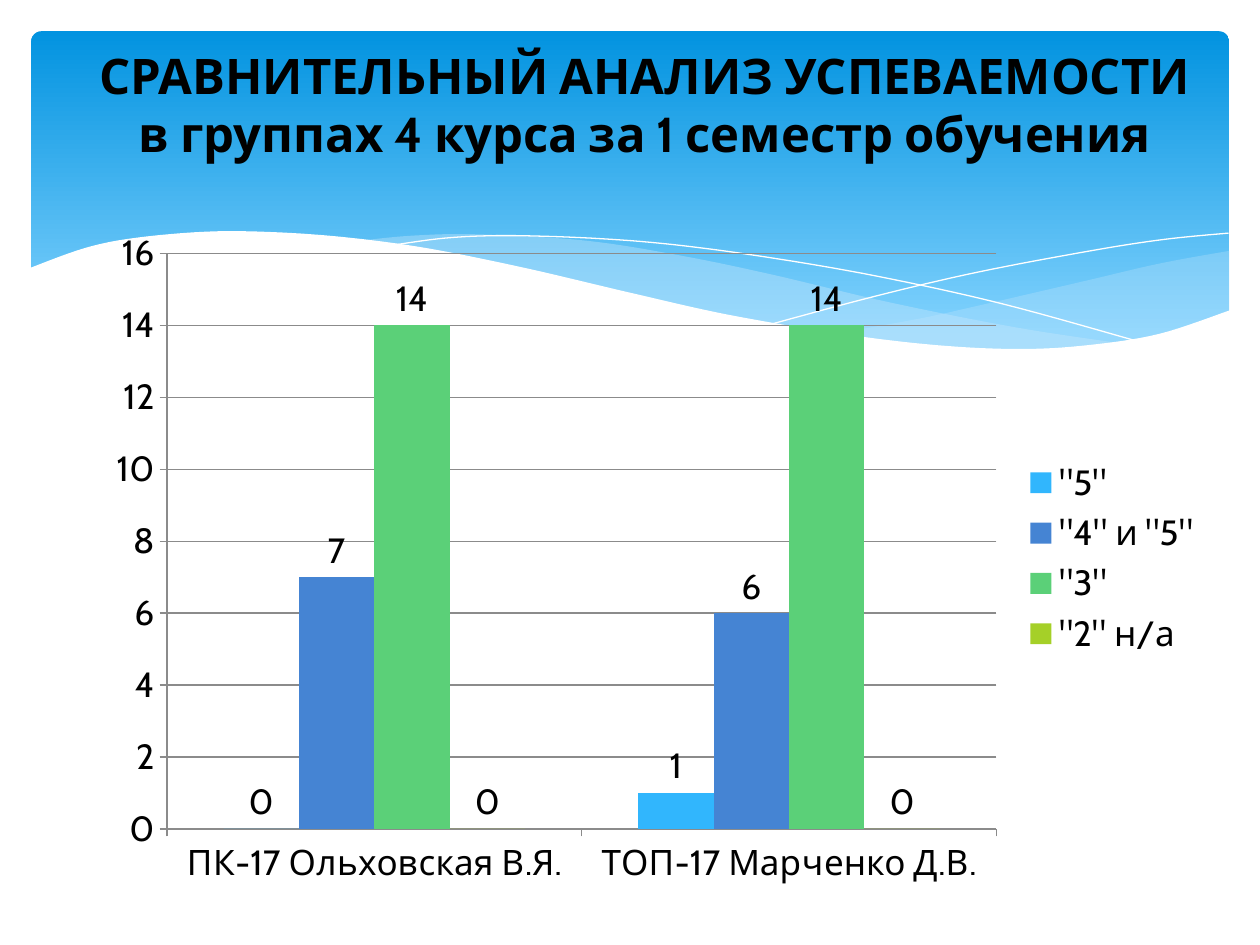
"""Build a slide comparing the fourth-year groups' results in a column chart."""
import lxml.etree
import pptx
import pptx.chart.data
import pptx.dml.color
import pptx.enum.chart
import pptx.enum.shapes
import pptx.enum.text
import pptx.oxml.ns
import pptx.util

Cm, Pt = pptx.util.Cm, pptx.util.Pt
RGBColor = pptx.dml.color.RGBColor

FONT = "Cabin"
BLACK = RGBColor(0x00, 0x00, 0x00)
WHITE = RGBColor(0xFF, 0xFF, 0xFF)
GRAY = RGBColor(0x8B, 0x8B, 0x8B)
SKY_TOP = RGBColor(0x02, 0x93, 0xE0)
SKY_BOTTOM = RGBColor(0x83, 0xD3, 0xFE)
MIST = RGBColor(0xC6, 0xE7, 0xFC)

TITLE_LINES = ["СРАВНИТЕЛЬНЫЙ АНАЛИЗ УСПЕВАЕМОСТИ", "в группах 4 курса за 1 семестр обучения"]
GROUPS = ["ПК-17 Ольховская В.Я.", "ТОП-17 Марченко Д.В."]
GRADES = [
    ('"5"', (0, 1), RGBColor(0x31, 0xB6, 0xFD)),
    ('"4" и "5"', (7, 6), RGBColor(0x45, 0x84, 0xD3)),
    ('"3"', (14, 14), RGBColor(0x5B, 0xD0, 0x78)),
    ('"2" н/а', (0, 0), RGBColor(0xA5, 0xD0, 0x28)),
]

WAVE_UNIT = Cm(0.254)
RIGHT_WAVE = [
    [(97.6, 19.9), (92.1, 20.9), (86.1, 22.3), (77.9, 24.2), (72.9, 25.3), (66.1, 26.5)],
    [(66.1, 26.5), (73.2, 27.4), (80.3, 27.8), (87.2, 27.4), (92.8, 26.3), (97.6, 24.7)],
]
MIDDLE_WAVE = [
    [(89.3, 27.3), (80.7, 26), (70.6, 24), (61.3, 21.8), (54.1, 20.3), (46.5, 19.1),
     (38, 18.6), (32.8, 18.7), (28.6, 19.1)],
    [(28.6, 19.1), (36.2, 20.3), (44.9, 22.2), (53, 24), (61.8, 25.8), (69.5, 27),
     (76.1, 27.7), (82.8, 27.8), (89.3, 27.3)],
]
LONG_CURVE = [(30.9, 19.5), (35.3, 18.9), (40.1, 18.7), (46.9, 18.9), (53.3, 19.4), (60.8, 20.4),
              (69.5, 21.9), (79.5, 24.1), (90.7, 27.2)]
SHORT_CURVE = [(61.3, 25.7), (69.5, 23.5), (77.6, 21.6), (86.6, 19.9), (92.4, 19), (97.5, 18.5)]
WHITE_WAVE = [
    [(97.7, 24.6), (92, 26.5), (86.3, 27.4), (80.9, 27.7), (74.4, 27.4), (66.8, 26.5),
     (57.9, 25), (50.3, 23.3), (41.8, 21.3), (33.9, 19.7), (27.1, 18.8), (21.1, 18.4),
     (16.1, 18.4), (10.6, 18.9), (6.7, 19.7), (2.3, 21.3)],
    [(2.3, 32.9), (97.7, 32.9)],
]


def smooth(points, steps=8):
    """Return points along a Catmull-Rom curve through the given points."""
    padded = [points[0], *points, points[-1]]
    curve = [points[0]]
    for before, start, end, after in zip(padded, padded[1:], padded[2:], padded[3:]):
        for step in range(1, steps + 1):
            t = step / steps
            curve.append(tuple(
                (2 * b + (c - a) * t + (2 * a - 5 * b + 4 * c - d) * t ** 2
                 + (3 * b - a - 3 * c + d) * t ** 3) / 2
                for a, b, c, d in zip(before, start, end, after)))
    return curve


def add_wave(slide, edges, color, opacity=None, closed=True):
    """Draw a filled wave between edges, or an open curve along them."""
    points = [(x * WAVE_UNIT, y * WAVE_UNIT) for edge in edges for x, y in smooth(edge)]
    builder = slide.shapes.build_freeform(*points[0], scale=1.0)
    builder.add_line_segments(points[1:], close=closed)
    shape = builder.convert_to_shape()
    shape.shadow.inherit = False
    if not closed:
        shape.fill.background()
        shape.line.color.rgb = color
        shape.line.width = Pt(0)
        return
    shape.line.fill.background()
    shape.fill.solid()
    shape.fill.fore_color.rgb = color
    if opacity:
        tag = pptx.oxml.ns.qn("a:srgbClr")
        color_element = next(shape._element.spPr.iter(tag))
        alpha = lxml.etree.SubElement(color_element, pptx.oxml.ns.qn("a:alpha"))
        alpha.set("val", str(opacity * 1000))


def add_backdrop(slide):
    """Draw the gradient panel and the waves over it."""
    panel = slide.shapes.add_shape(
        pptx.enum.shapes.MSO_SHAPE.ROUNDED_RECTANGLE, Cm(0.63), Cm(0.63), Cm(24.15), Cm(6.86))
    panel.adjustments[0] = 0.03
    panel.shadow.inherit = False
    panel.line.fill.background()
    panel.fill.gradient()
    panel.fill.gradient_angle = 270
    for stop, color, position in zip(panel.fill.gradient_stops, (SKY_TOP, SKY_BOTTOM), (0, 0.9)):
        stop.color.rgb = color
        stop.position = position
    add_wave(slide, RIGHT_WAVE, MIST, 29)
    add_wave(slide, MIDDLE_WAVE, MIST, 40)
    for curve in (LONG_CURVE, SHORT_CURVE):
        add_wave(slide, [curve], WHITE, closed=False)
    add_wave(slide, WHITE_WAVE, WHITE)


def fill_title(slide):
    """Place the title in front of the backdrop and format it."""
    title = slide.shapes.title
    slide.shapes._spTree.append(title._element)
    title.left, title.top, title.width, title.height = Cm(1.3), Cm(0.91), Cm(23.39), Cm(3.48)
    frame = title.text_frame
    frame.word_wrap = True
    frame.auto_size = pptx.enum.text.MSO_AUTO_SIZE.NONE
    frame.vertical_anchor = pptx.enum.text.MSO_ANCHOR.TOP
    frame.margin_top = Cm(0)
    frame.text = "\v".join(TITLE_LINES)
    paragraph = frame.paragraphs[0]
    paragraph.alignment = pptx.enum.text.PP_ALIGN.CENTER
    for run in paragraph.runs:
        run.font.name = FONT
        run.font.size = Pt(28)
        run.font.bold = True
        run.font.color.rgb = BLACK


def add_grade_chart(slide):
    """Add the clustered columns with one series per grade."""
    data = pptx.chart.data.CategoryChartData(number_format="0")
    data.categories = GROUPS
    for name, values, _ in GRADES:
        data.add_series(name, values)
    chart = slide.shapes.add_chart(
        pptx.enum.chart.XL_CHART_TYPE.COLUMN_CLUSTERED,
        Cm(1.9), Cm(4.4), Cm(22.6), Cm(13.71), data).chart
    chart.has_title = False
    chart.font.name = FONT
    chart.font.size = Pt(20)
    chart.font.color.rgb = BLACK
    chart.has_legend = True
    chart.legend.position = pptx.enum.chart.XL_LEGEND_POSITION.RIGHT
    chart.legend.include_in_layout = False

    value_axis = chart.value_axis
    value_axis.minimum_scale, value_axis.maximum_scale, value_axis.major_unit = 0, 16, 2
    value_axis.has_major_gridlines = True
    for line in (value_axis.major_gridlines.format.line, value_axis.format.line,
                 chart.category_axis.format.line):
        line.color.rgb = GRAY
        line.width = Pt(0.75)
    for axis in (value_axis, chart.category_axis):
        axis.major_tick_mark = pptx.enum.chart.XL_TICK_MARK.OUTSIDE

    plot = chart.plots[0]
    plot.gap_width = 150
    plot.overlap = 0
    plot.vary_by_categories = False
    for series, (_, _, color) in zip(plot.series, GRADES):
        series.format.fill.solid()
        series.format.fill.fore_color.rgb = color
        series.data_labels.show_value = True
        series.data_labels.position = pptx.enum.chart.XL_LABEL_POSITION.OUTSIDE_END


def main():
    """Create the presentation and save it."""
    presentation = pptx.Presentation()
    presentation.slide_width, presentation.slide_height = Cm(25.4), Cm(19.05)
    slide = presentation.slides.add_slide(presentation.slide_layouts[5])
    add_backdrop(slide)
    fill_title(slide)
    add_grade_chart(slide)
    presentation.save("out.pptx")


if __name__ == "__main__":
    main()
